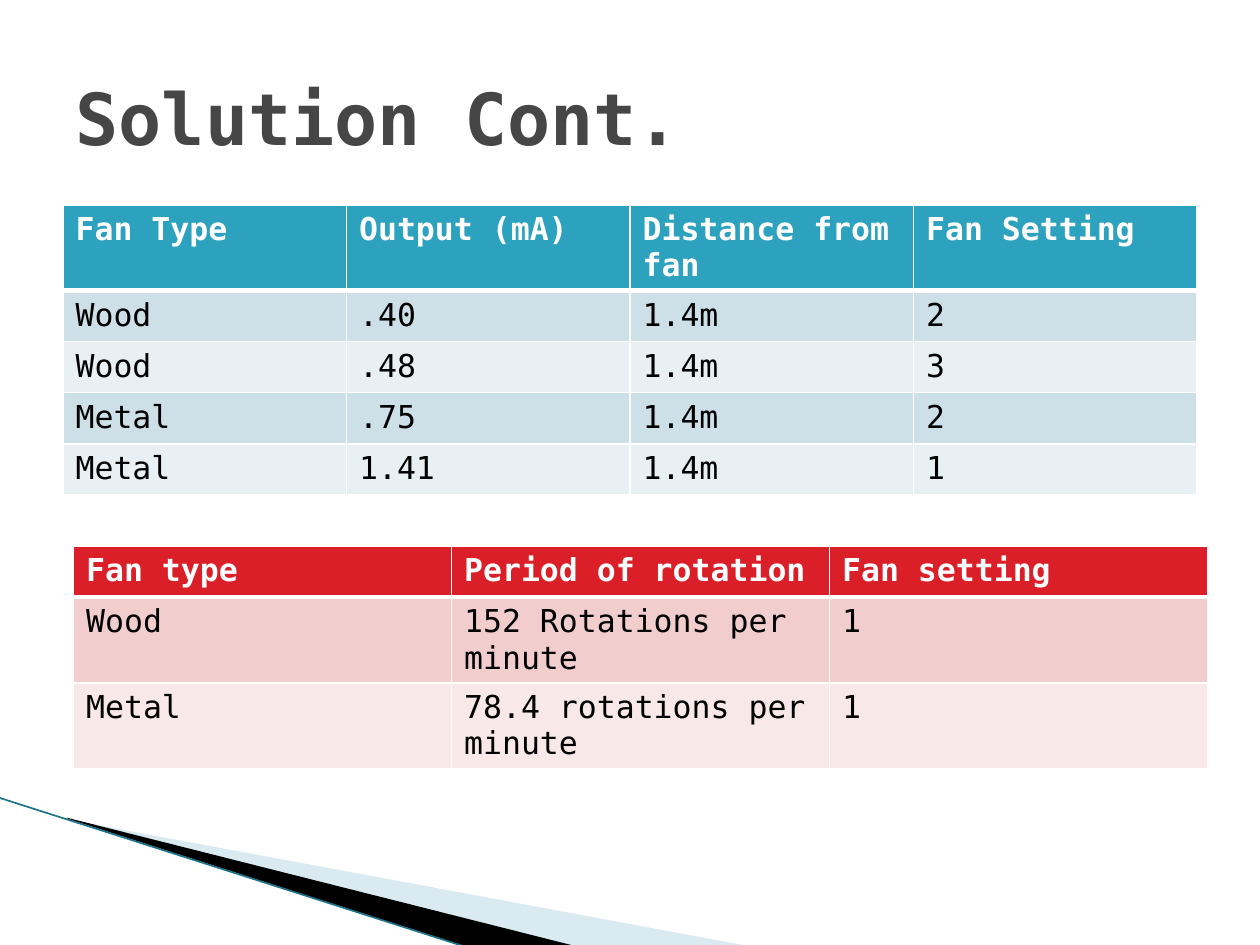
from dataclasses import dataclass

import pptx
import pptx.dml.color
import pptx.enum.text
import pptx.oxml.ns
import pptx.oxml.xmlchemy
import pptx.slide
import pptx.util

Pt = pptx.util.Pt
RGBColor = pptx.dml.color.RGBColor
OxmlElement = pptx.oxml.xmlchemy.OxmlElement

FONT = "DejaVu Sans Mono"
WHITE = RGBColor(0xFF, 0xFF, 0xFF)
BLACK = RGBColor(0x00, 0x00, 0x00)
TITLE_GREY = RGBColor(0x46, 0x46, 0x46)
TEAL = RGBColor(0x2D, 0xA2, 0xBF)
TEAL_BAND = RGBColor(0xCD, 0xE0, 0xE8)
TEAL_PALE = RGBColor(0xE8, 0xF0, 0xF4)
RED = RGBColor(0xDA, 0x1F, 0x28)
RED_BAND = RGBColor(0xF1, 0xCD, 0xCD)
RED_PALE = RGBColor(0xF8, 0xE8, 0xE8)
WEDGE_BLUE = RGBColor(0xA0, 0xCB, 0xDC)
EDGE_TEAL = RGBColor(0x1B, 0x74, 0x89)

TABLE_WIDTH = 648
ROW_HEIGHT = 29.2
TALL_ROW_HEIGHT = 48.8


@dataclass
class Wedge:
    points: list[tuple[float, float]]
    color: RGBColor
    opacity: int = 100


@dataclass
class FanTable:
    left: float
    top: float
    header_color: RGBColor
    band_colors: tuple[RGBColor, RGBColor]
    tall_rows: set[int]
    rows: list[list[str]]


WEDGES = [
    Wedge([(39.6, 468.5), (428.4, 540.7), (328.3, 540.7), (39.6, 468)], WEDGE_BLUE, 40),
    Wedge([(38.2, 467.3), (329, 540.7), (267.8, 541.4), (38.9, 468)], BLACK),
]

TABLES = [
    FanTable(36, 117, TEAL, (TEAL_BAND, TEAL_PALE), {0}, [
        ["Fan Type", "Output (mA)", "Distance from fan", "Fan Setting"],
        ["Wood", ".40", "1.4m", "2"],
        ["Wood", ".48", "1.4m", "3"],
        ["Metal", ".75", "1.4m", "2"],
        ["Metal", "1.41", "1.4m", "1"],
    ]),
    FanTable(42, 312, RED, (RED_BAND, RED_PALE), {1, 2}, [
        ["Fan type", "Period of rotation", "Fan setting"],
        ["Wood", "152 Rotations per minute", "1"],
        ["Metal", "78.4 rotations per minute", "1"],
    ]),
]


def add_run(paragraph, text: str, size: float, color: RGBColor, bold: bool) -> None:
    run = paragraph.add_run()
    run.text = text
    run.font.name = FONT
    run.font.size = Pt(size)
    run.font.bold = bold
    run.font.color.rgb = color


def draw_wedge(slide: pptx.slide.Slide, wedge: Wedge) -> None:
    start, *others = [(Pt(x), Pt(y)) for x, y in wedge.points]
    builder = slide.shapes.build_freeform(*start)
    builder.add_line_segments(others)
    shape = builder.convert_to_shape()
    shape.shadow.inherit = False
    shape.fill.solid()
    shape.fill.fore_color.rgb = wedge.color
    shape.line.fill.background()
    if wedge.opacity < 100:
        color = shape._element.spPr.find(".//" + pptx.oxml.ns.qn("a:srgbClr"))
        alpha = OxmlElement("a:alpha")
        alpha.set("val", str(wedge.opacity * 1000))
        color.append(alpha)


def draw_edge(slide: pptx.slide.Slide) -> None:
    connector = slide.shapes.add_connector(1, Pt(-0.7), Pt(455.8), Pt(267.1), Pt(541.4))
    connector.line.color.rgb = EDGE_TEAL
    connector.line.width = Pt(0.95)
    connector._element.spPr.append(OxmlElement("a:effectLst"))


def set_borders(cell, widths: dict[str, float]) -> None:
    properties = cell._tc.get_or_add_tcPr()
    for position, (side, width) in enumerate(widths.items()):
        line = OxmlElement(f"a:{side}")
        line.set("w", str(Pt(width)))
        fill = OxmlElement("a:solidFill")
        color = OxmlElement("a:srgbClr")
        color.set("val", str(WHITE))
        fill.append(color)
        line.append(fill)
        properties.insert(position, line)


def draw_table(slide: pptx.slide.Slide, fan_table: FanTable) -> None:
    heights = [TALL_ROW_HEIGHT if index in fan_table.tall_rows else ROW_HEIGHT
               for index in range(len(fan_table.rows))]
    column_count = len(fan_table.rows[0])
    table = slide.shapes.add_table(
        len(heights), column_count, Pt(fan_table.left), Pt(fan_table.top),
        Pt(TABLE_WIDTH), Pt(sum(heights))).table
    for column in table.columns:
        column.width = Pt(TABLE_WIDTH / column_count)
    for row_index, texts in enumerate(fan_table.rows):
        table.rows[row_index].height = Pt(heights[row_index])
        is_header = row_index == 0
        color = fan_table.header_color if is_header else fan_table.band_colors[(row_index - 1) % 2]
        borders = {"lnL": 1, "lnR": 1, "lnT": 3 if row_index == 1 else 1, "lnB": 3 if is_header else 1}
        for column_index, text in enumerate(texts):
            cell = table.cell(row_index, column_index)
            cell.fill.solid()
            cell.fill.fore_color.rgb = color
            set_borders(cell, borders)
            add_run(cell.text_frame.paragraphs[0], text, 18, WHITE if is_header else BLACK, is_header)


def draw_title(slide: pptx.slide.Slide) -> None:
    title = slide.shapes.title
    title.left, title.top, title.width, title.height = Pt(36), Pt(21.6), Pt(648), Pt(90)
    title.text_frame.vertical_anchor = pptx.enum.text.MSO_ANCHOR.MIDDLE
    paragraph = title.text_frame.paragraphs[0]
    paragraph.alignment = pptx.enum.text.PP_ALIGN.LEFT
    add_run(paragraph, "Solution Cont.", 41, TITLE_GREY, True)


def main() -> None:
    presentation = pptx.Presentation()
    presentation.slide_width = Pt(720)
    presentation.slide_height = Pt(540)
    slide = presentation.slides.add_slide(presentation.slide_layouts[5])
    draw_title(slide)
    for wedge in WEDGES:
        draw_wedge(slide, wedge)
    draw_edge(slide)
    for fan_table in TABLES:
        draw_table(slide, fan_table)
    presentation.save("out.pptx")


if __name__ == "__main__":
    main()
